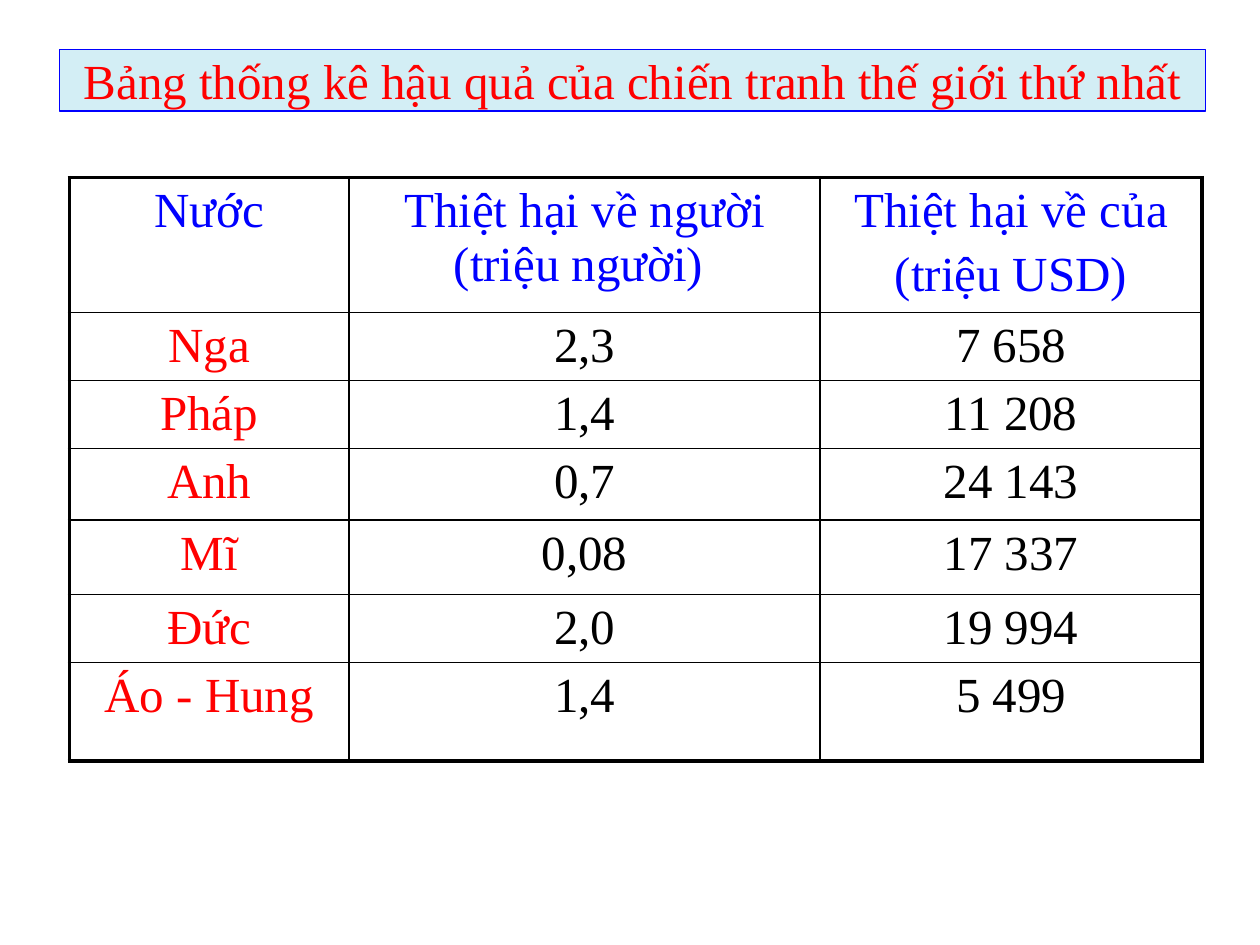
from pptx import Presentation
from pptx.dml.color import RGBColor
from pptx.enum.text import MSO_ANCHOR, MSO_AUTO_SIZE, PP_ALIGN
from pptx.oxml.ns import qn
from pptx.util import Pt
from lxml.etree import SubElement

BLACK, BLUE, RED, PALE_BLUE = "000000", "0000FF", "FF0000", "D3EEF5"
THIN, THICK = 1, 2.25

HEADINGS = [
    ["Nước"],
    ["Thiệt hại về người (triệu người) "],
    ["Thiệt hại về của", "(triệu USD)"],
]
LOSSES = [
    ("Nga", "2,3", "7 658"),
    ("Pháp", "1,4", "11 208"),
    ("Anh", "0,7", "24 143"),
    ("Mĩ", "0,08", "17 337"),
    ("Đức", "2,0", "19 994"),
    ("Áo - Hung", "1,4", "5 499"),
]
COLUMN_WIDTHS = [159.84, 269.28, 218.16]
ROW_HEIGHTS = [77, 38.9, 38.9, 41, 42.5, 38.9, 56.2]


def color(value):
    return RGBColor.from_string(value)


def write_lines(frame, lines, text_color, space_before=0):
    for index, line in enumerate(lines):
        para = frame.add_paragraph() if index else frame.paragraphs[0]
        para.alignment = PP_ALIGN.CENTER
        para.space_before = Pt(space_before)
        span = para.add_run()
        span.text = line
        span.font.size = Pt(28)
        span.font.name = "Times New Roman"
        span.font.color.rgb = color(text_color)


def set_borders(cell, widths):
    properties = cell._tc.get_or_add_tcPr()
    for position, (side, width) in enumerate(widths.items()):
        line = properties.makeelement(qn(f"a:{side}"), {"w": str(Pt(width))})
        fill = SubElement(line, qn("a:solidFill"))
        SubElement(fill, qn("a:srgbClr"), val=BLACK)
        properties.insert(position, line)


def place_title(page, left, top, width, height):
    title = page.shapes.title
    title.left, title.top = Pt(left), Pt(top)
    title.width, title.height = Pt(width), Pt(height)
    title.fill.solid()
    title.fill.fore_color.rgb = color(PALE_BLUE)
    title.line.color.rgb = color(BLUE)
    title.line.width = Pt(0.75)
    frame = title.text_frame
    frame.auto_size = MSO_AUTO_SIZE.NONE
    frame.word_wrap = True
    frame.vertical_anchor = MSO_ANCHOR.MIDDLE
    write_lines(frame, ["Bảng thống kê hậu quả của chiến tranh thế giới thứ nhất"], RED)


def place_loss_table(page, left, top, width, height):
    rows = [HEADINGS] + [[[text] for text in row] for row in LOSSES]
    last_row, last_column = len(rows) - 1, len(HEADINGS) - 1
    table = page.shapes.add_table(
        len(rows), len(HEADINGS), Pt(left), Pt(top), Pt(width), Pt(height)
    ).table
    table.first_row = table.horz_banding = False
    for column, column_width in zip(table.columns, COLUMN_WIDTHS):
        column.width = Pt(column_width)
    for row, row_height in zip(table.rows, ROW_HEIGHTS):
        row.height = Pt(row_height)
    for r, row in enumerate(rows):
        for c, lines in enumerate(row):
            cell = table.cell(r, c)
            cell.fill.background()
            text_color = BLUE if r == 0 else RED if c == 0 else BLACK
            write_lines(cell.text_frame, lines, text_color, space_before=5.6)
            set_borders(cell, {
                "lnL": THICK if c == 0 else THIN,
                "lnR": THICK if c == last_column else THIN,
                "lnT": THICK if r == 0 else THIN,
                "lnB": THICK if r == last_row else THIN,
            })


def main():
    deck = Presentation()
    deck.slide_width, deck.slide_height = Pt(720), Pt(540)
    page = deck.slides.add_slide(deck.slide_layouts[5])
    place_loss_table(page, 39.6, 101.5, sum(COLUMN_WIDTHS), sum(ROW_HEIGHTS))
    place_title(page, 33.84, 28.08, 655.2, 35.28)
    deck.save("out.pptx")


if __name__ == "__main__":
    main()
